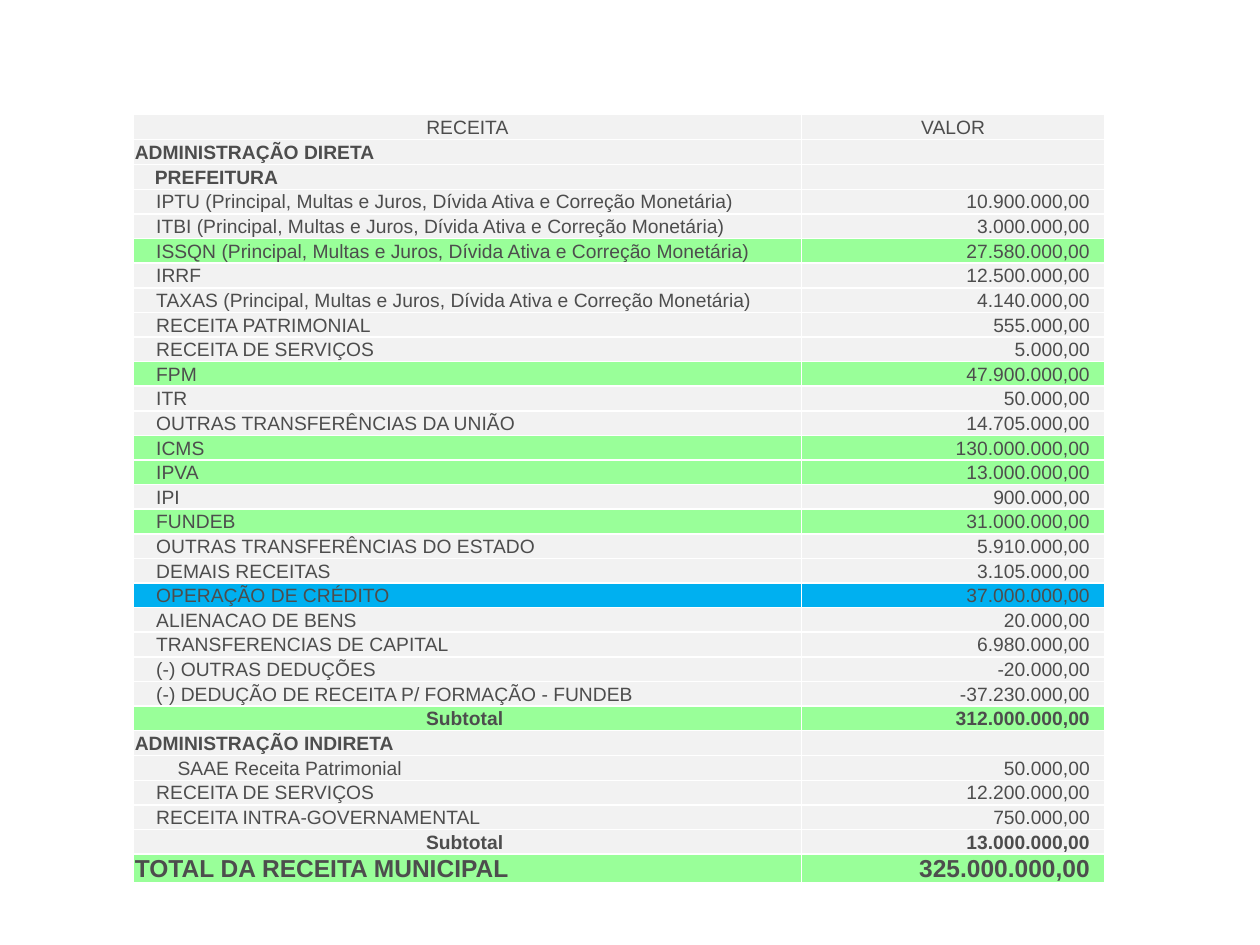
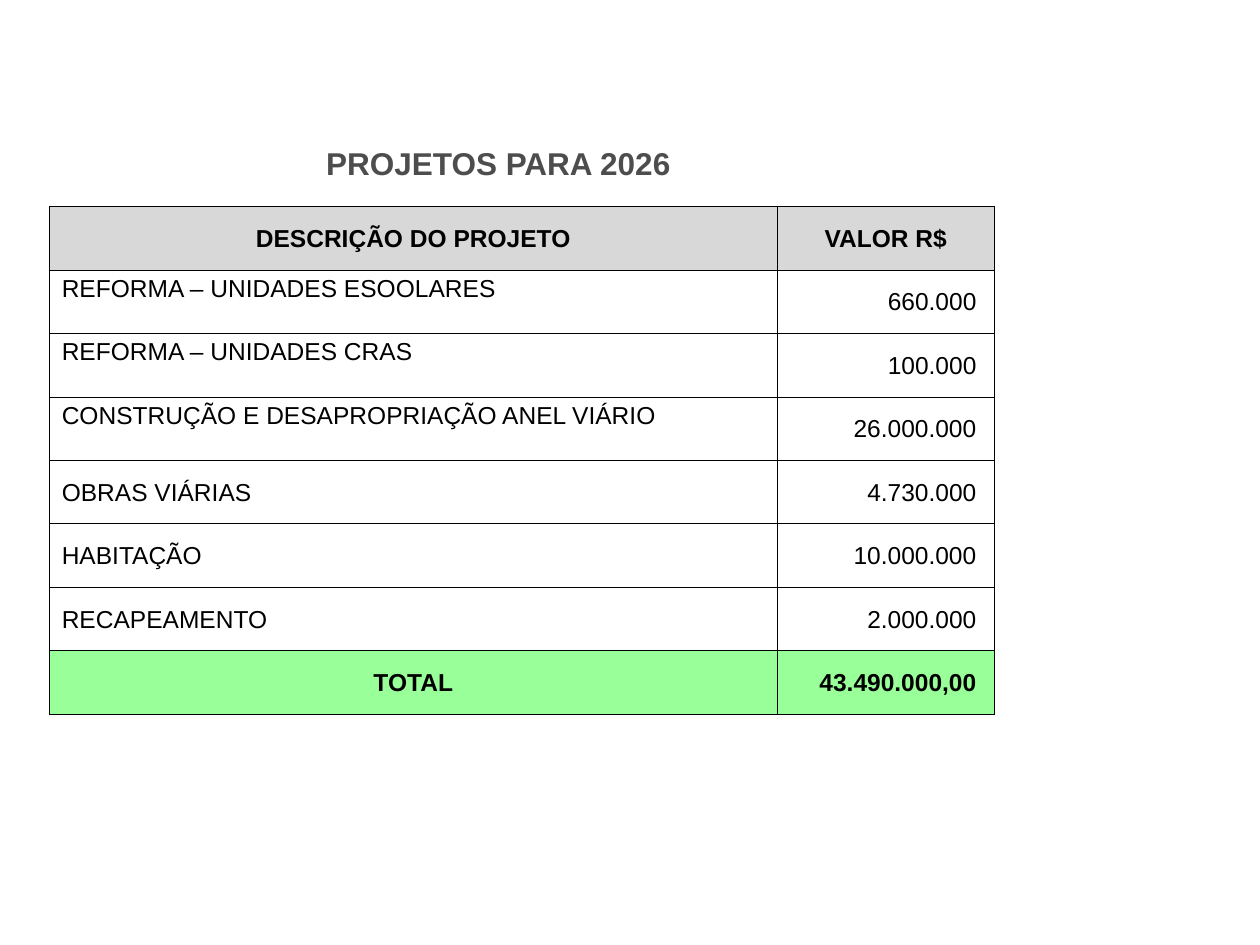
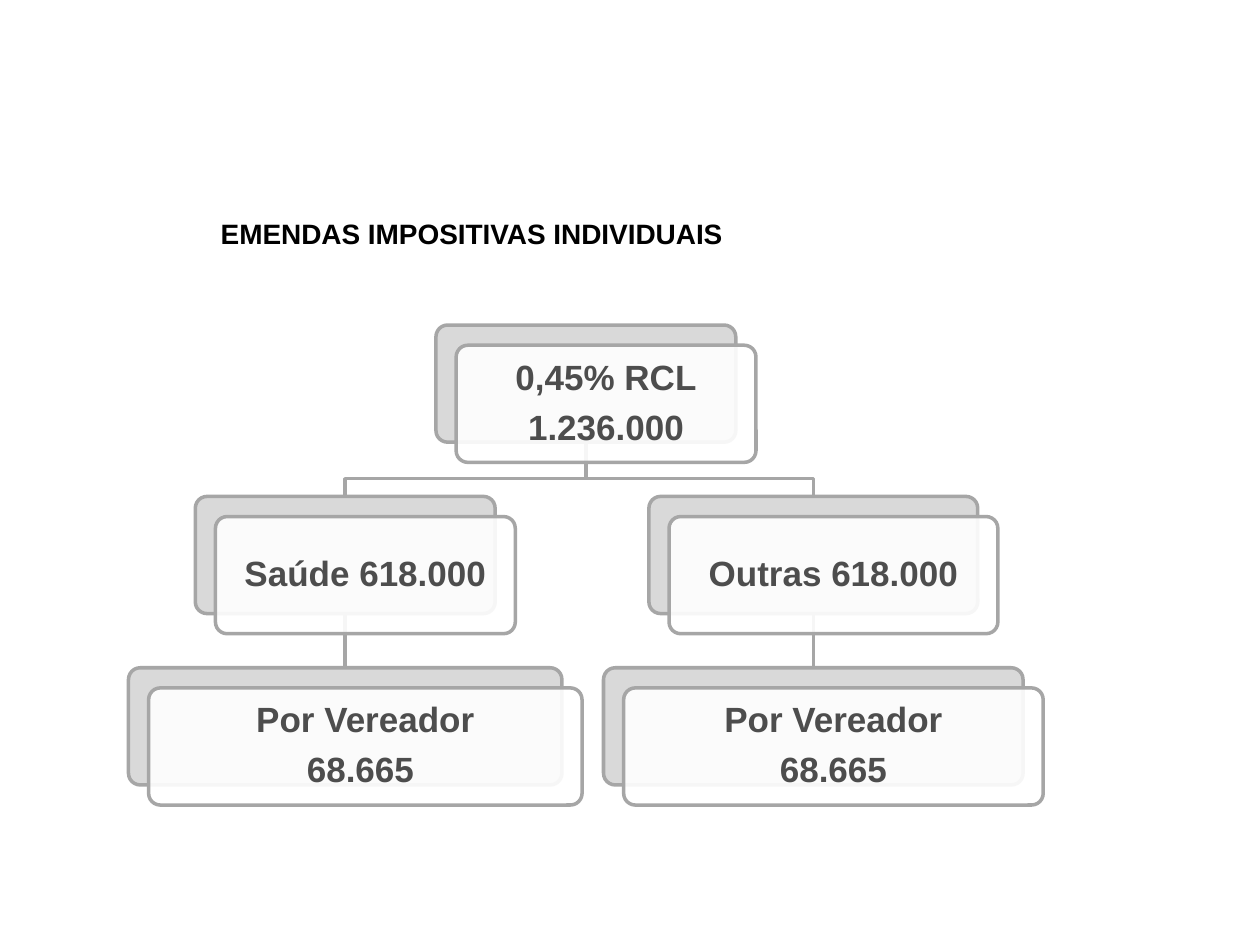
from lxml.etree import SubElement as Sub
from pptx import Presentation
from pptx.dml.color import RGBColor as Rgb
from pptx.enum.shapes import MSO_CONNECTOR as Conn, MSO_SHAPE as Geo
from pptx.enum.text import MSO_ANCHOR as Anchor, MSO_AUTO_SIZE as Auto, PP_ALIGN as Align
from pptx.oxml.ns import qn
from pptx.util import Inches, Pt

HUE = {"text": "4D4D4D", "black": "000000", "white": "FFFFFF", "pale": "F2F2F2",
       "green": "99FF99", "blue": "00B0F0", "head": "D8D8D8", "card": "D9D9D9",
       "line": "A6A6A6"}
BLANK, TITLE = 6, 5
INCOME = [
    ("RECEITA", "VALOR", "head", "pale"),
    ("ADMINISTRAÇÃO DIRETA", "", "group", "pale"),
    ("PREFEITURA", "", "unit", "pale"),
    ("IPTU (Principal, Multas e Juros, Dívida Ativa e Correção Monetária)",
     "10.900.000,00", "item", "pale"),
    ("ITBI (Principal, Multas e Juros, Dívida Ativa e Correção Monetária)",
     "3.000.000,00", "item", "pale"),
    ("ISSQN (Principal, Multas e Juros, Dívida Ativa e Correção Monetária)",
     "27.580.000,00", "item", "green"),
    ("IRRF", "12.500.000,00", "item", "pale"),
    ("TAXAS (Principal, Multas e Juros, Dívida Ativa e Correção Monetária)",
     "4.140.000,00", "item", "pale"),
    ("RECEITA PATRIMONIAL", "555.000,00", "item", "pale"),
    ("RECEITA DE SERVIÇOS", "5.000,00", "item", "pale"),
    ("FPM", "47.900.000,00", "item", "green"),
    ("ITR", "50.000,00", "item", "pale"),
    ("OUTRAS TRANSFERÊNCIAS DA UNIÃO", "14.705.000,00", "item", "pale"),
    ("ICMS", "130.000.000,00", "item", "green"),
    ("IPVA", "13.000.000,00", "item", "green"),
    ("IPI", "900.000,00", "item", "pale"),
    ("FUNDEB", "31.000.000,00", "item", "green"),
    ("OUTRAS TRANSFERÊNCIAS DO ESTADO", "5.910.000,00", "item", "pale"),
    ("DEMAIS RECEITAS", "3.105.000,00", "item", "pale"),
    ("OPERAÇÃO DE CRÉDITO", "37.000.000,00", "item", "blue"),
    ("ALIENACAO DE BENS", "20.000,00", "item", "pale"),
    ("TRANSFERENCIAS DE CAPITAL", "6.980.000,00", "item", "pale"),
    ("(-) OUTRAS DEDUÇÕES", "-20.000,00", "item", "pale"),
    ("(-) DEDUÇÃO DE RECEITA P/ FORMAÇÃO - FUNDEB", "-37.230.000,00", "item", "pale"),
    ("Subtotal ", "312.000.000,00", "sum", "green"),
    ("ADMINISTRAÇÃO INDIRETA", "", "group", "pale"),
    ("SAAE Receita Patrimonial", "50.000,00", "nest", "pale"),
    ("RECEITA DE SERVIÇOS", "12.200.000,00", "item", "pale"),
    ("RECEITA INTRA-GOVERNAMENTAL", "750.000,00", "item", "pale"),
    ("Subtotal ", "13.000.000,00", "sum", "pale"),
    ("TOTAL DA RECEITA MUNICIPAL", "325.000.000,00", "total", "green"),
]
PLANS = [
    ("DESCRIÇÃO DO PROJETO", "VALOR R$", "head", "head"),
    ("REFORMA – UNIDADES ESOOLARES", "660.000", "high", None),
    ("REFORMA – UNIDADES CRAS", "100.000", "high", None),
    ("CONSTRUÇÃO E DESAPROPRIAÇÃO ANEL VIÁRIO", "26.000.000", "high", None),
    ("OBRAS VIÁRIAS", "4.730.000", "item", None),
    ("HABITAÇÃO", "10.000.000", "item", None),
    ("RECAPEAMENTO", "2.000.000", "item", None),
    ("TOTAL", "43.490.000,00", "sum", "green"),
]
MID = {"align": Align.CENTER}
INCOME_LOOK = {
    "base": {"size": 11, "color": "text", "edge": ("white", 1), "right": 0.12},
    "head": MID, "group": {"bold": True}, "unit": {"bold": True, "left": 0.17},
    "item": {"left": 0.18}, "nest": {"left": 0.35}, "sum": {**MID, "bold": True},
    "total": {"bold": True, "size": 14}}
PLAN_LOOK = {
    "base": {"size": 14, "color": "black", "edge": ("black", 0.5), "right": 0.14},
    "head": {**MID, "bold": True}, "item": {"left": 0.1},
    "high": {"left": 0.1, "low": 0.22}, "sum": {**MID, "bold": True}}
BAND = [(0.18, "", {"size": 8, "pad": 0}),
        (0.25, "EMENDAS IMPOSITIVAS INDIVIDUAIS",
         {"size": 16, "color": "black", "bold": True, "pad": 0})]
CARDS = {
    "root": (2.44, 0, 2.38, ["0,45% RCL", "1.236.000"]),
    "health": (0.53, 1.36, 2.38, ["Saúde 618.000"]),
    "other": (4.13, 1.36, 2.61, ["Outras 618.000"]),
    "left": (0, 2.72, 3.44, ["Por Vereador", "68.665 "]),
    "right": (3.77, 2.72, 3.33, ["Por Vereador", "68.665"]),
}


def rgb(name):
    """Return the colour of that name."""
    return Rgb.from_string(HUE[name])


def put(obj, **vals):
    """Set attributes from format values."""
    for key, val in vals.items():
        setattr(obj, key, val)


def style(font, size, color, bold=False):
    """Format a font."""
    put(font, name="Arial", size=Pt(size), bold=bold)
    font.color.rgb = rgb(color)


def frame(cell, color, width):
    """Draw the four borders of a cell."""
    props = cell._tc.get_or_add_tcPr()
    for side in ("lnL", "lnR", "lnT", "lnB"):
        line = Sub(props, qn(f"a:{side}"), w=str(Pt(width)))
        Sub(Sub(line, qn("a:solidFill")), qn("a:srgbClr"), val=HUE[color])


def fit(cell, text, fill, look, align, left=0.01, right=0.01):
    """Fill one table cell with formatted text."""
    if "edge" in look:
        frame(cell, *look["edge"])
    if fill:
        cell.fill.solid()
        cell.fill.fore_color.rgb = rgb(fill)
    else:
        cell.fill.background()
    put(cell, vertical_anchor=Anchor.MIDDLE, margin_left=Inches(left),
        margin_right=Inches(right), margin_top=Inches(look.get("pad", 0.01)),
        margin_bottom=Inches(look.get("low", 0)))
    para = cell.text_frame.paragraphs[0]
    para.alignment = align
    if text:
        run = para.add_run()
        run.text = text
        style(run.font, look["size"], look["color"], look.get("bold", False))
    else:
        para._p.get_or_add_endParaRPr().set("sz", str(look["size"] * 100))


def plain(slide, box, cols, highs):
    """Add a two-column table without banding."""
    table = slide.shapes.add_table(len(highs), 2, *map(Inches, box)).table
    put(table, first_row=False, horz_banding=False)
    for col, width in zip(table.columns, cols):
        col.width = Inches(width)
    for row, high in zip(table.rows, highs):
        row.height = Inches(high)
    return table


def grid(slide, box, cols, highs, rows, looks):
    """Place a table of labels and amounts."""
    table = plain(slide, box, cols, highs)
    for num, (label, value, kind, fill) in enumerate(rows):
        look = {**looks["base"], **looks[kind]}
        fit(table.cell(num, 0), label, fill, look,
            look.get("align", Align.LEFT), look.get("left", 0.01))
        look.pop("low", None)
        if kind == "head":
            fit(table.cell(num, 1), value, fill, look, Align.CENTER)
        else:
            fit(table.cell(num, 1), value, fill, look, Align.RIGHT, right=look["right"])


def band(slide, box, cols):
    """Place the heading table, each row merged across."""
    table = plain(slide, box, cols, [high for high, _, _ in BAND])
    for num, (_, text, look) in enumerate(BAND):
        start, end = table.cell(num, 0), table.cell(num, 1)
        start.merge(end)
        fit(start, text, None, look, Align.CENTER, 0, 0)
        fit(end, "", None, {"size": 8, "pad": 0}, Align.CENTER, 0, 0)


def head(slide, text, box, size, color):
    """Move and format the slide title."""
    title = slide.shapes.title
    left, top, width, height = map(Inches, box)
    put(title, left=left, top=top, width=width, height=height)
    body = title.text_frame
    put(body, text=text, word_wrap=True, auto_size=Auto.NONE, vertical_anchor=Anchor.MIDDLE,
        margin_left=0, margin_right=0, margin_top=0, margin_bottom=0)
    para = body.paragraphs[0]
    para.alignment = Align.CENTER
    style(para.runs[0].font, size, color, True)


def ink(shape):
    """Give a shape the grey diagram line."""
    shape.line.color.rgb = rgb("line")
    shape.line.width = Pt(2)


def card(slide, x, y, width, fill):
    """Add one rounded card."""
    shape = slide.shapes.add_shape(Geo.ROUNDED_RECTANGLE, *map(Inches, (x, y, width, 0.93)))
    shape.adjustments[0] = 0.1
    shape.shadow.inherit = False
    shape.fill.solid()
    shape.fill.fore_color.rgb = rgb(fill)
    ink(shape)
    return shape


def front(slide, x, y, width, lines):
    """Add a translucent card with its text."""
    shape = card(slide, x, y, width, "white")
    tint = shape._element.spPr.find(qn("a:solidFill")).find(qn("a:srgbClr"))
    Sub(tint, qn("a:alpha"), val="90000")
    body = shape.text_frame
    put(body, text="\n".join(lines), word_wrap=True, vertical_anchor=Anchor.MIDDLE)
    for num, para in enumerate(body.paragraphs):
        put(para, alignment=Align.CENTER, line_spacing=0.9)
        if num:
            para.space_before = Pt(7)
        style(para.runs[0].font, 20, "text", True)


def bend(slide, top, low):
    """Draw an elbow line from one card down to another."""
    x, y = top.left + top.width // 2, top.top + top.height
    end, turn = low.left + low.width // 2, y + Inches(0.29)
    path = slide.shapes.build_freeform(x, y)
    path.add_line_segments([(x, turn), (end, turn), (end, low.top)], close=False)
    shape = path.convert_to_shape()
    shape.fill.background()
    shape.shadow.inherit = False
    ink(shape)


def join(slide, top, low):
    """Connect two cards with a straight line."""
    line = slide.shapes.add_connector(Conn.STRAIGHT, 0, 0, 0, 0)
    line.begin_connect(top, 2)
    line.end_connect(low, 0)
    ink(line)
    Sub(line._element.spPr, qn("a:effectLst"))


def tree(slide, x, y):
    """Draw the tree of cards from its top left corner."""
    backs = {key: card(slide, x + dx, y + dy, width, "card")
             for key, (dx, dy, width, _) in CARDS.items()}
    for key, leaf in (("health", "left"), ("other", "right")):
        bend(slide, backs["root"], backs[key])
        join(slide, backs[key], backs[leaf])
    for dx, dy, width, lines in CARDS.values():
        front(slide, x + dx + 0.16, y + dy + 0.16, width, lines)


def main():
    """Build and save the three slides."""
    deck = Presentation()
    put(deck, slide_width=Inches(10), slide_height=Inches(7.5))
    first, second, third = (deck.slides.add_slide(deck.slide_layouts[num])
                            for num in (BLANK, TITLE, BLANK))
    count = len(INCOME) - 1
    grid(first, (1.06, 0.91, 7.71, 6.08), (5.3, 2.41),
         [5.86 / count] * count + [0.22], INCOME, INCOME_LOOK)
    head(second, "PROJETOS PARA 2026", (2.44, 1.09, 3.03, 0.4), 18, "text")
    grid(second, (0.39, 1.64, 7.5, 4.03), (5.78, 1.72),
         [4.03 / len(PLANS)] * len(PLANS), PLANS, PLAN_LOOK)
    tree(third, 1.02, 2.58)
    band(third, (0.23, 1.56, 7.03, 0.43), (4.83, 2.2))
    deck.save("out.pptx")


if __name__ == "__main__":
    main()
